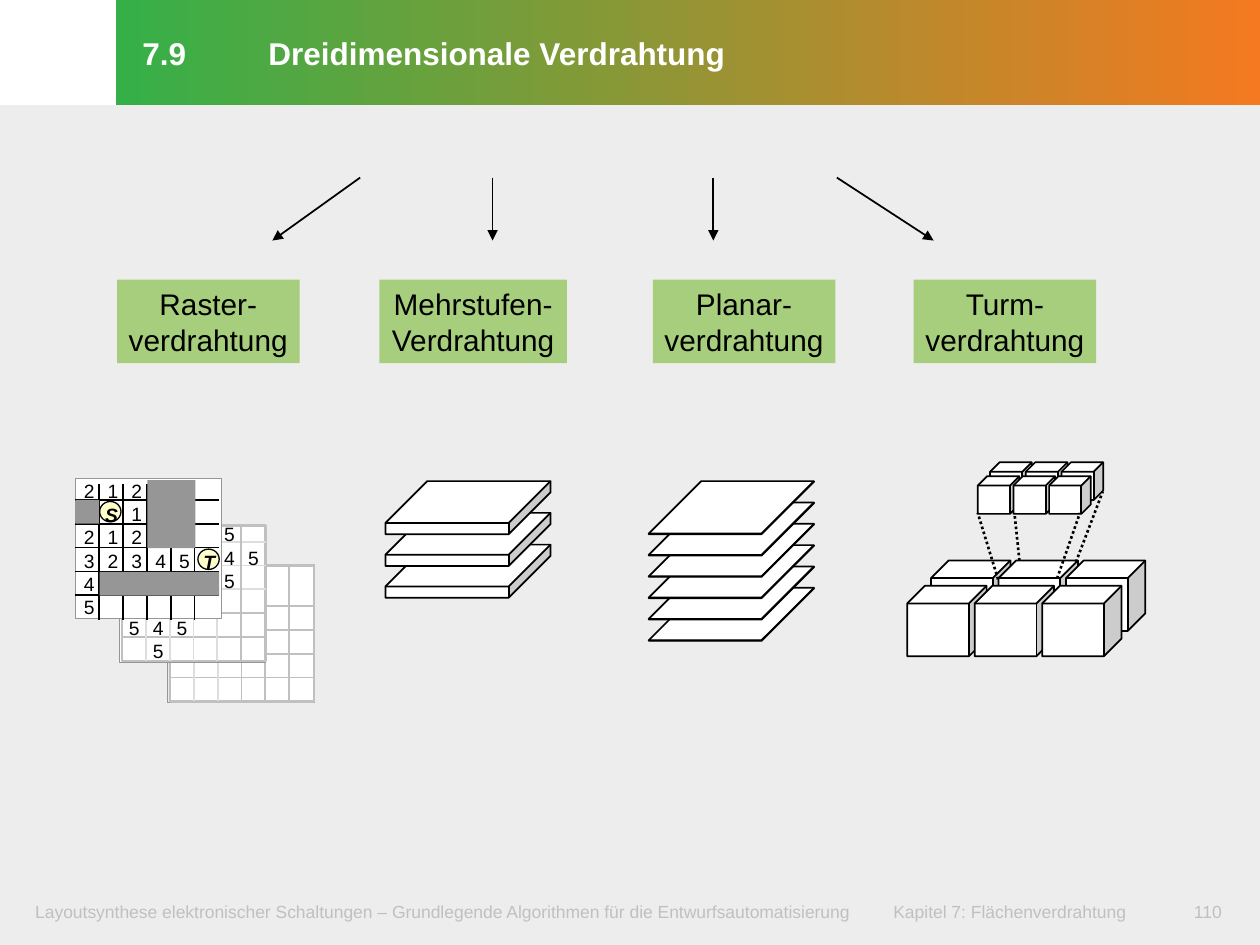
"""Build the slide on three-dimensional routing methods."""
from lxml import etree
from pptx import Presentation
from pptx import util as u
from pptx.dml.color import RGBColor
from pptx.enum import dml, shapes, text
from pptx.oxml.ns import qn

BLACK = RGBColor(0x00, 0x00, 0x00)
WHITE = RGBColor(0xFF, 0xFF, 0xFF)
PALE = RGBColor(0xED, 0xED, 0xED)
PLATE = RGBColor(0xEA, 0xEA, 0xEA)
LIGHT = RGBColor(0xDD, 0xDD, 0xDD)
SILVER = RGBColor(0xC0, 0xC0, 0xC0)
GRAY = RGBColor(0x96, 0x96, 0x96)
LIME = RGBColor(0xA7, 0xCE, 0x7C)
CREAM = RGBColor(0xFF, 0xFF, 0xCC)
GREEN = RGBColor(0x35, 0xB0, 0x48)
ORANGE = RGBColor(0xF4, 0x79, 0x20)
RECT = shapes.MSO_SHAPE.RECTANGLE
CUBE = shapes.MSO_SHAPE.CUBE
OVAL = shapes.MSO_SHAPE.OVAL

prs = Presentation()
prs.slide_width, prs.slide_height = u.Cm(25.4), u.Cm(19.05)
s = prs.slides.add_slide(prs.slide_layouts[5])


def put(content, box, shape=None, sp=None, fill=None, line=None, width=1, adj=None,
        size=11, color=BLACK, bold=False, italic=False, align=text.PP_ALIGN.CENTER,
        anchor=text.MSO_ANCHOR.MIDDLE, inset=(0.25, 0.13, 0.25, 0.13), wrap=False, tab=None):
    x, y, w, h = (u.Cm(v) for v in box)
    if sp is not None:
        sp.left, sp.top, sp.width, sp.height = x, y, w, h
    elif shape is None:
        sp = s.shapes.add_textbox(x, y, w, h)
    else:
        sp = s.shapes.add_shape(shape, x, y, w, h)
        sp.shadow.inherit = False
        if fill is None:
            sp.fill.background()
        else:
            sp.fill.solid()
            sp.fill.fore_color.rgb = fill
        if line is None:
            sp.line.fill.background()
        else:
            sp.line.color.rgb = line
            sp.line.width = u.Pt(width)
        if adj is not None:
            sp.adjustments[0] = adj
    if not content:
        return sp
    tf = sp.text_frame
    tf.word_wrap = wrap
    tf.auto_size = text.MSO_AUTO_SIZE.NONE
    tf.vertical_anchor = anchor
    tf.margin_left, tf.margin_top, tf.margin_right, tf.margin_bottom = (u.Cm(v) for v in inset)
    p = tf.paragraphs[0]
    p.text = content
    p.alignment = align
    if tab:
        tabs = etree.SubElement(p._p.get_or_add_pPr(), qn("a:tabLst"))
        etree.SubElement(tabs, qn("a:tab"), pos=str(u.Cm(tab)), algn="l")
    for r in p.runs:
        r.font.name, r.font.size = "Arial", u.Pt(size)
        r.font.bold, r.font.italic = bold, italic
        r.font.color.rgb = color
    return sp


def draw_line(x1, y1, x2, y2, color=BLACK, width=1, dash=None, arrow=False):
    c = s.shapes.add_connector(shapes.MSO_CONNECTOR.STRAIGHT, *(u.Cm(v) for v in (x1, y1, x2, y2)))
    c.line.color.rgb = color
    c.line.width = u.Pt(width)
    if dash:
        c.line.dash_style = dash
    if arrow:
        etree.SubElement(c.line._get_or_add_ln(), qn("a:tailEnd"), type="triangle")
    etree.SubElement(c._element.spPr, qn("a:effectLst"))


LEFT, TOP = text.PP_ALIGN.LEFT, text.MSO_ANCHOR.TOP
title = put("7.9\tDreidimensionale Verdrahtung", (2.34, 0, 23.06, 2.12), sp=s.shapes.title,
            size=18, color=WHITE, bold=True, align=LEFT, wrap=True,
            inset=(0.53, 0.13, 0.25, 0.18), tab=2.54)
title.text_frame.paragraphs[0].line_spacing = u.Pt(23.5)
title.fill.gradient()
title.fill.gradient_angle = 0
for stop, color in zip(title.fill.gradient_stops, (GREEN, ORANGE)):
    stop.color.rgb = color

put("", (0, 2.12, 25.4, 16.93), RECT, fill=PALE)
footer = dict(size=10, color=SILVER, anchor=TOP, wrap=True, inset=(0.3, 0.15, 0.3, 0.15))
put("Layoutsynthese elektronischer Schaltungen – Grundlegende Algorithmen für die "
    "Entwurfsautomatisierung\tKapitel 7: Flächenverdrahtung",
    (0.41, 18.01, 23.29, 0.81), align=LEFT, tab=17.3, **footer)
put("110", (23.6, 18.01, 1.5, 0.81), **footer)

for label, x, w in (("Raster-\vverdrahtung", 2.36, 3.68), ("Mehrstufen-\vVerdrahtung", 7.65, 3.78),
                    ("Planar-\vverdrahtung", 13.16, 3.68), ("Turm-\vverdrahtung", 18.42, 3.68)):
    put(label, (x, 5.64, w, 1.68), RECT, fill=LIME, size=17)
for x1, x2 in ((7.26, 5.49), (9.93, 9.93), (14.38, 14.38), (16.87, 18.82)):
    draw_line(x1, 3.58, x2, 4.85, arrow=True)

for x, count, step, adj in ((7.77, 3, 0.64, 0.787), (13.08, 6, 0.43, 0.988)):
    for i in reversed(range(count)):
        put("", (x, 9.7 + i * step, 3.33, 1.07), CUBE, fill=WHITE, line=BLACK, adj=adj)

for x, y, w, h, step in ((18.77, 11.3, 1.6, 1.42, 1.36), (18.29, 11.81, 1.6, 1.42, 1.36),
                         (19.96, 9.32, 0.84, 0.76, 0.72), (19.71, 9.6, 0.84, 0.76, 0.72)):
    for i in range(3):
        put("", (x + i * step, y, w, h), CUBE, fill=WHITE, line=BLACK, adj=0.25)
for ends in ((20.12, 11.68, 19.71, 10.34), (21.31, 11.66, 21.77, 10.34),
             (20.55, 11.3, 20.45, 10.34), (21.69, 11.33, 22.23, 9.91)):
    draw_line(*ends, width=1.5, dash=dml.MSO_LINE.ROUND_DOT)

CELL, SIDE, HEIGHT = 0.48, 2.9, 2.74
layers = (
    dict(plate=(3.38, 11.38, 2.95, 2.79), fill=PLATE, frame=WHITE, x=3.43, y=11.4, row=12.22,
         columns=[LIGHT] * 2 + [SILVER] * 3, rows=[SILVER] * 4,
         blocks=(), marks=(), digits=(), start=(0, 0)),
    dict(plate=(2.41, 10.62, 2.95, 2.74), fill=WHITE, frame=None, x=2.46, y=10.59, row=10.92,
         columns=[LIGHT] * 4 + [SILVER], rows=[LIGHT] * 3 + [SILVER] * 2,
         blocks=(), marks=(), digits=("....5", "....45", "....5", "", "545", ".5"),
         start=(2.33, 10.4)),
    dict(plate=(1.52, 9.65, 2.95, 2.82), fill=WHITE, frame=None, x=1.52, y=9.75, row=10.08,
         columns=[BLACK] * 5, rows=[BLACK] * 5,
         blocks=((1.52, 10.08, 0.48, 0.48), (2.01, 11.53, 2.41, 0.48), (2.97, 9.68, 0.97, 1.37)),
         marks=(("S", 2.01, 10.11), ("T", 3.99, 11.07)),
         digits=("212", "..1", "212", "32345", "4", "5"), start=(1.42, 9.52)),
)
for layer in layers:
    x, y = layer["x"], layer["y"]
    put("", layer["plate"], RECT, fill=layer["fill"], line=GRAY, width=0.75)
    if layer["columns"][0] != BLACK:
        put("", (x, y, SIDE, HEIGHT), RECT, fill=layer["frame"], line=SILVER, width=1.5)
    for i, color in enumerate(layer["rows"]):
        row = layer["row"] + i * CELL
        draw_line(x, row, x + SIDE, row, color)
    for i, color in enumerate(layer["columns"], 1):
        column = x + i * CELL
        draw_line(column, y, column, y + HEIGHT, color)
    for block in layer["blocks"]:
        put("", block, RECT, fill=GRAY)
    for name, mx, my in layer["marks"]:
        put("", (mx, my, 0.43, 0.41), OVAL, fill=CREAM, line=BLACK, width=0.75)
        put(name, (mx + 0.11, my + 0.03, 0.25, 0.46), bold=True, italic=True,
            align=LEFT, anchor=TOP, inset=(0, 0, 0, 0))
    dx, dy = layer["start"]
    for j, digits in enumerate(layer["digits"]):
        for i, digit in enumerate(digits):
            if digit != ".":
                put(digit, (dx + i * 0.48, dy + j * 0.47, 0.76, 0.74), inset=(0.28, 0.13, 0.28, 0.13))

prs.save("out.pptx")
